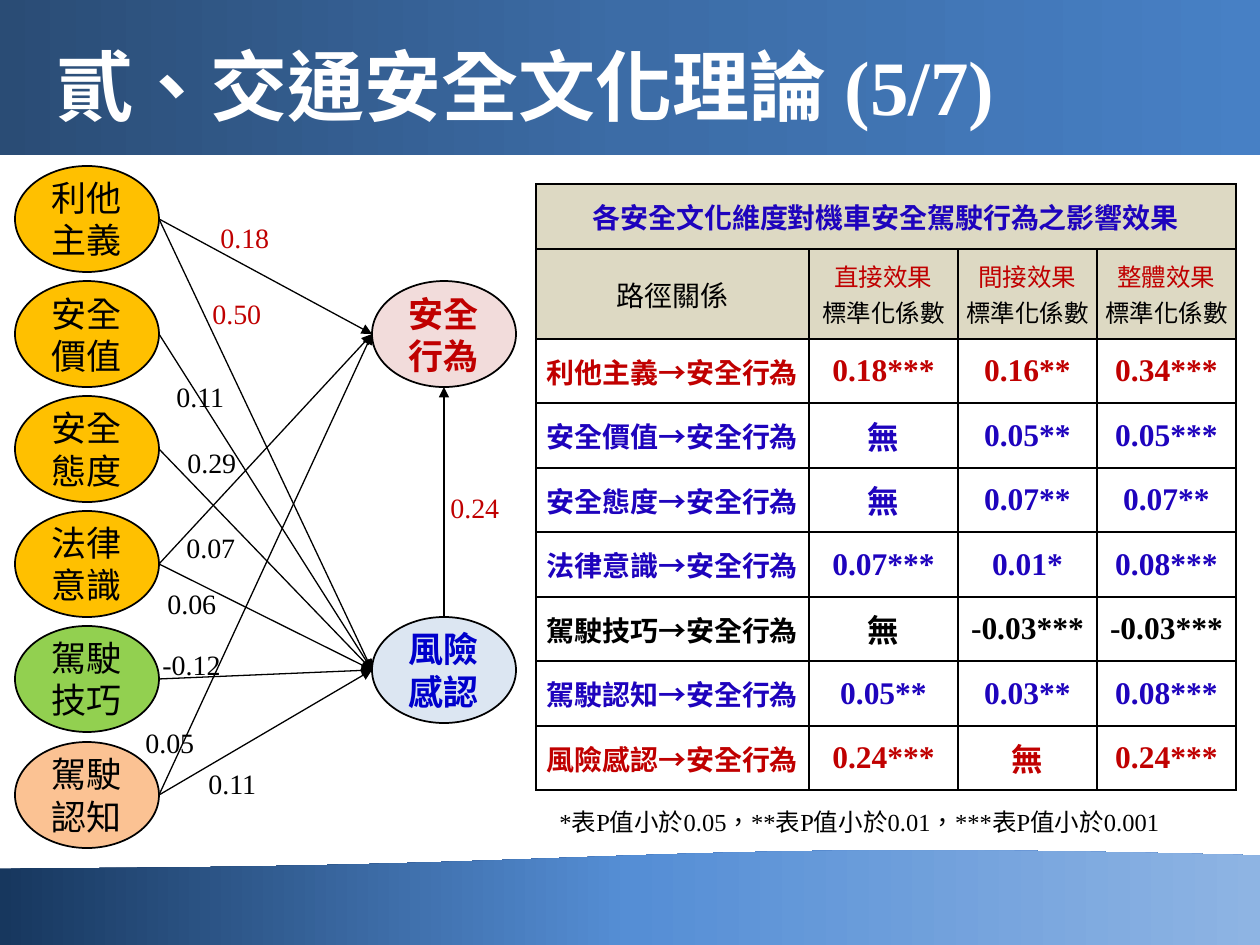
from copy import deepcopy
from typing import Any, NamedTuple

from lxml.etree import SubElement
from pptx import Presentation
from pptx.dml.color import RGBColor
from pptx.enum.lang import MSO_LANGUAGE_ID
from pptx.enum.shapes import MSO_CONNECTOR, MSO_SHAPE
from pptx.enum.text import MSO_ANCHOR, PP_ALIGN
from pptx.oxml.ns import qn
from pptx.util import Emu, Pt

SERIF = "Times New Roman"
SANS = "Noto Sans CJK SC"
BLACK, RED, BLUE, BEIGE = "000000", "C00000", "1E03BD", "DDD9C3"
AMBER = "FFC000"
NODE_WIDTH, NODE_HEIGHT = 144, 106
COLUMN_WIDTHS = [273, 149, 139, 139]
ROW_HEIGHTS = [65, 90] + [64, 65] * 3 + [64]


class Node(NamedTuple):
    text: str
    left: int
    top: int
    fill: str
    color: str = BLACK
    bold: bool = False


class Label(NamedTuple):
    text: str
    left: int
    top: int
    color: str = BLACK
    width: int = 76


class Band(NamedTuple):
    kind: MSO_SHAPE
    top: int
    height: int
    colors: tuple[str, ...]
    angle: int
    rotation: int


class Effect(NamedTuple):
    color: str
    cause: str
    values: tuple[str, ...]


CAUSES = [("利他主義", AMBER), ("安全價值", AMBER), ("安全態度", AMBER),
          ("法律意識", AMBER), ("駕駛技巧", "92D050"), ("駕駛認知", "FBC293")]
CAUSE_NODES = [Node(text, 15, 166 + 576 * index // 5, fill)
               for index, (text, fill) in enumerate(CAUSES)]
BEHAVIOUR = Node("安全行為", 372, 281, "F2DCDB", RED, True)
RISK = Node("風險感認", 372, 617, "DCE6F2", "0000CC", True)
BEHAVIOUR_CAUSES = [0, 3, 5]

BANDS = [
    Band(MSO_SHAPE.RECTANGLE, 0, 155, ("2A4C75", "3C6CA6", "4780C5"), 0, 0),
    Band(MSO_SHAPE.FLOWCHART_DOCUMENT, 849, 97, ("17375E", "558ED5", "8EB4E3"), 180, 180),
]
LABELS = [
    Label("0.18", 208, 214, RED), Label("0.50", 200, 290, RED),
    Label("0.24", 438, 484, RED), Label("0.11", 164, 373),
    Label("0.29", 175, 439), Label("0.07", 174, 524),
    Label("0.06", 155, 580), Label("-0.12", 150, 641, width=90),
    Label("0.05", 133, 719), Label("0.11", 196, 760),
]
EFFECTS = [
    Effect(RED, "利他主義", ("0.18***", "0.16**", "0.34***")),
    Effect(BLUE, "安全價值", ("無", "0.05**", "0.05***")),
    Effect(BLUE, "安全態度", ("無", "0.07**", "0.07**")),
    Effect(BLUE, "法律意識", ("0.07***", "0.01*", "0.08***")),
    Effect(BLACK, "駕駛技巧", ("無", "-0.03***", "-0.03***")),
    Effect(BLUE, "駕駛認知", ("0.05**", "0.03**", "0.08***")),
    Effect(RED, "風險感認", ("0.24***", "無", "0.24***")),
]


def px(length: int) -> Emu:
    """Turn pixels into EMU."""
    return Emu(round(length * 914400 / 126))


def rgb(color: str) -> RGBColor:
    """Turn a hex string into a colour."""
    return RGBColor.from_string(color)


def apply(target: Any, values: dict[str, Any]) -> None:
    """Set each named attribute on the target."""
    for name, value in values.items():
        setattr(target, name, value)


def write(paragraph: Any, text: str, size: int, color: str, name: str = SERIF,
          bold: bool = False, align: PP_ALIGN = PP_ALIGN.CENTER) -> None:
    """Write one formatted run into a paragraph."""
    paragraph.alignment = align
    run = paragraph.add_run()
    run.text = text
    apply(run.font, {"size": Pt(size), "name": name, "bold": bold,
                     "language_id": MSO_LANGUAGE_ID.TRADITIONAL_CHINESE})
    run.font.color.rgb = rgb(color)


def draw_band(slide: Any, band: Band) -> None:
    """Draw a gradient band behind everything else."""
    shape = slide.shapes.add_shape(band.kind, 0, px(band.top), px(1260), px(band.height))
    shape.rotation = band.rotation
    shape.shadow.inherit = False
    shape.line.fill.background()
    shape.fill.gradient()
    shape.fill.gradient_angle = band.angle
    stop_list = shape._element.spPr.find(qn("a:gradFill")).find(qn("a:gsLst"))
    stop_list.append(deepcopy(stop_list[-1]))
    for index, (stop, color) in enumerate(zip(shape.fill.gradient_stops, band.colors)):
        stop.position = index / 2
        stop.color.rgb = rgb(color)
    slide.shapes._spTree.insert(2, shape._element)


def draw_node(slide: Any, node: Node) -> None:
    """Draw an ellipse with its name."""
    shape = slide.shapes.add_shape(MSO_SHAPE.OVAL, px(node.left), px(node.top),
                                   px(NODE_WIDTH), px(NODE_HEIGHT))
    shape.shadow.inherit = False
    shape.fill.solid()
    shape.fill.fore_color.rgb = rgb(node.fill)
    shape.line.color.rgb = rgb(BLACK)
    shape.line.width = Pt(1)
    apply(shape.text_frame, {"word_wrap": True, "vertical_anchor": MSO_ANCHOR.MIDDLE})
    write(shape.text_frame.paragraphs[0], node.text, 20, node.color, SANS, node.bold)


def draw_arrow(slide: Any, start: tuple[int, int], end: tuple[int, int]) -> None:
    """Draw a thin arrow between two points."""
    points = [px(value) for value in (*start, *end)]
    connector = slide.shapes.add_connector(MSO_CONNECTOR.STRAIGHT, *points)
    connector.line.color.rgb = rgb(BLACK)
    connector.line.width = Pt(0.75)
    SubElement(connector.line._get_or_add_ln(), qn("a:tailEnd"), type="triangle")
    SubElement(connector._element.spPr, qn("a:effectLst"))


def draw_paths(slide: Any) -> None:
    """Draw the arrows from causes to risk and behaviour."""
    middle = NODE_HEIGHT // 2
    for index, node in enumerate(CAUSE_NODES):
        targets = [BEHAVIOUR, RISK] if index in BEHAVIOUR_CAUSES else [RISK]
        for target in targets:
            draw_arrow(slide, (node.left + NODE_WIDTH, node.top + middle),
                       (target.left, target.top + middle))
    center = RISK.left + NODE_WIDTH // 2
    draw_arrow(slide, (center, RISK.top), (center, BEHAVIOUR.top + NODE_HEIGHT))


def draw_text(slide: Any, label: Label, size: int, wrap: bool) -> None:
    """Draw a left-aligned text box."""
    box = slide.shapes.add_textbox(px(label.left), px(label.top), px(label.width), px(46))
    box.text_frame.word_wrap = wrap
    write(box.text_frame.paragraphs[0], label.text, size, label.color, align=PP_ALIGN.LEFT)


def format_cell(cell: Any, fill: str | None) -> None:
    """Set margins, fill and black borders of a cell."""
    apply(cell, {"margin_left": px(8), "margin_right": px(8), "margin_top": 0,
                 "margin_bottom": 0, "vertical_anchor": MSO_ANCHOR.MIDDLE})
    if fill:
        cell.fill.solid()
        cell.fill.fore_color.rgb = rgb(fill)
    else:
        cell.fill.background()
    properties = cell._tc.get_or_add_tcPr()
    for index, side in enumerate(("lnL", "lnR", "lnT", "lnB")):
        border = SubElement(properties, qn(f"a:{side}"), w=str(Pt(1)))
        SubElement(SubElement(border, qn("a:solidFill")), qn("a:srgbClr"), val=BLACK)
        properties.insert(index, border)


def draw_table(slide: Any) -> None:
    """Draw the table of effects."""
    frame = slide.shapes.add_table(len(ROW_HEIGHTS), len(COLUMN_WIDTHS), px(536), px(184),
                                   px(sum(COLUMN_WIDTHS)), px(sum(ROW_HEIGHTS)))
    table = frame.table
    apply(table, {"first_row": False, "horz_banding": False})
    for column, width in zip(table.columns, COLUMN_WIDTHS):
        column.width = px(width)
    for index, (row, height) in enumerate(zip(table.rows, ROW_HEIGHTS)):
        row.height = px(height)
        for cell in row.cells:
            format_cell(cell, BEIGE if index < 2 else None)
    table.cell(0, 0).merge(table.cell(0, 3))
    write(table.cell(0, 0).text_frame.paragraphs[0],
          "各安全文化維度對機車安全駕駛行為之影響效果", 16, BLUE, bold=True)
    write(table.cell(1, 0).text_frame.paragraphs[0], "路徑關係", 16, BLACK)
    for column, kind in enumerate(("直接效果", "間接效果", "整體效果"), 1):
        text_frame = table.cell(1, column).text_frame
        write(text_frame.paragraphs[0], kind, 14, RED)
        write(text_frame.add_paragraph(), "標準化係數", 14, BLACK)
    for row, effect in enumerate(EFFECTS, 2):
        for column, text in enumerate((f"{effect.cause}→安全行為", *effect.values)):
            write(table.cell(row, column).text_frame.paragraphs[0], text,
                  18 if column else 16, effect.color, bold=True)


def main() -> None:
    """Build and save the slide."""
    presentation = Presentation()
    apply(presentation, {"slide_width": px(1260), "slide_height": px(945)})
    slide = presentation.slides.add_slide(presentation.slide_layouts[5])
    title = slide.shapes.title
    apply(title, {"left": px(44), "top": px(26), "width": px(1181), "height": px(118)})
    title.text_frame.vertical_anchor = MSO_ANCHOR.MIDDLE
    write(title.text_frame.paragraphs[0], "貳、交通安全文化理論 (5/7)", 44, "FFFFFF",
          bold=True, align=PP_ALIGN.LEFT)
    for band in BANDS:
        draw_band(slide, band)
    draw_table(slide)
    note = Label("*表P值小於0.05，**表P值小於0.01，***表P值小於0.001", 547, 801, width=650)
    draw_text(slide, note, 14, True)
    for node in [*CAUSE_NODES, BEHAVIOUR, RISK]:
        draw_node(slide, node)
    draw_paths(slide)
    for label in LABELS:
        draw_text(slide, label, 16, False)
    presentation.save("out.pptx")


if __name__ == "__main__":
    main()
